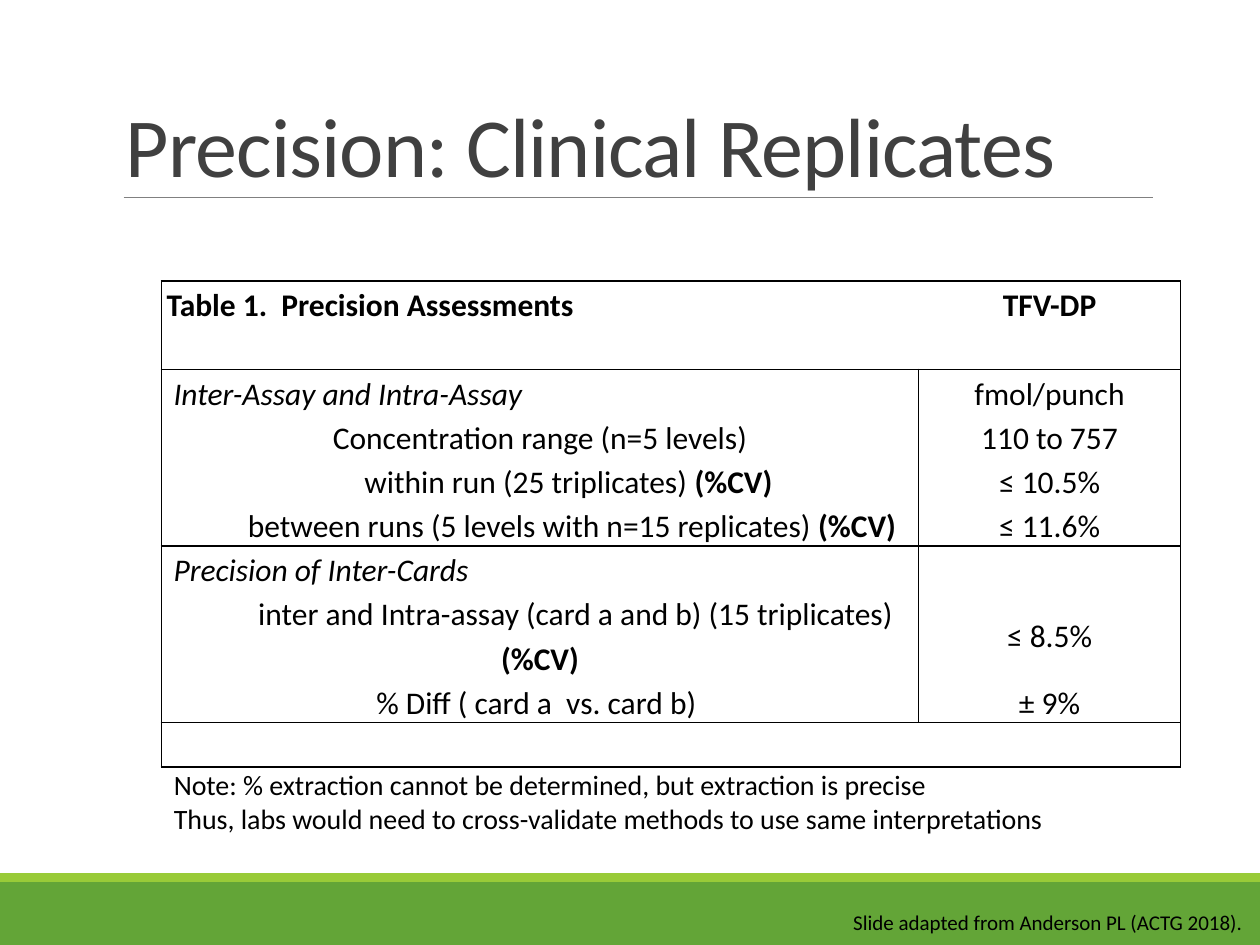
from dataclasses import dataclass

from lxml.etree import SubElement
from pptx import Presentation
from pptx.dml.color import RGBColor
from pptx.enum.shapes import MSO_CONNECTOR, MSO_SHAPE
from pptx.enum.text import MSO_ANCHOR, PP_ALIGN
from pptx.oxml.ns import qn
from pptx.util import Pt


@dataclass(frozen=True)
class Theme:
    font: str = "Calibri"
    ink: str = "000000"
    gray: str = "404040"
    rule: str = "808080"
    green: str = "63A537"
    lime: str = "99CB38"
    title: int = 48
    body: int = 18
    note: int = 16
    credit: int = 12


THEME = Theme()
WIDE, HIGH = 720, 540
LINE = 25.25  # height of one table line
CV = "(%CV)"

# label, bold tail, first-line indent, value
HEAD = [("Table 1.  Precision Assessments", "", 0, "TFV-DP"), ("", "", 0, "")]
ASSAY = [
    ("Inter-Assay and Intra-Assay", "", 0, "fmol/punch"),
    ("Concentration range (n=5 levels)", "", 0, "110 to 757"),
    ("within run (25 triplicates) ", CV, 32.5, "≤ 10.5%"),
    ("between runs (5 levels with n=15 replicates) ", CV, 36.6, "≤ 11.6%"),
]
CARDS = [
    ("Precision of Inter-Cards", "", 0, ""),
    ("inter and Intra-assay (card a and b) (15 triplicates) ", CV, 40.7, "≤ 8.5%"),
    ("% Diff ( card a  vs. card b) ", "", 0, "± 9%"),
]
GROUPS = [HEAD, ASSAY, CARDS, [("", "", 0, "")]]


def color(code):
    return RGBColor.from_string(code)


def style(para, size, ink=THEME.ink, align=PP_ALIGN.LEFT):
    para.alignment = align
    para.font.name = THEME.font
    para.font.size = Pt(size)
    para.font.color.rgb = color(ink)


def add_text(slide, box, lines, size, ink=THEME.ink, align=PP_ALIGN.LEFT, wrap=True):
    frame = slide.shapes.add_textbox(*map(Pt, box)).text_frame
    frame.word_wrap = wrap
    for i, line in enumerate(lines):
        para = frame.add_paragraph() if i else frame.paragraphs[0]
        para.text = line
        style(para, size, ink, align)
    return frame


def add_title(slide, box, text):
    frame = add_text(slide, box, [text], THEME.title, THEME.gray)
    frame.vertical_anchor = MSO_ANCHOR.BOTTOM
    para = frame.paragraphs[0]
    para.line_spacing = 0.85
    para.runs[0].font._element.set("spc", "-50")


def add_rule(slide, left, right, y):
    rule = slide.shapes.add_connector(
        MSO_CONNECTOR.STRAIGHT, Pt(left), Pt(y), Pt(right), Pt(y))
    rule.line.color.rgb = color(THEME.rule)
    rule.line.width = Pt(0.5)
    SubElement(rule._element.spPr, qn("a:effectLst"))


def add_band(slide, box, fill):
    band = slide.shapes.add_shape(MSO_SHAPE.RECTANGLE, *map(Pt, box))
    band.shadow.inherit = False
    band.fill.solid()
    band.fill.fore_color.rgb = color(fill)
    band.line.fill.background()


def add_footer(slide, box, text):
    left, top, width, height = box
    add_band(slide, box, THEME.green)
    add_band(slide, (left, top - 5, width, 5), THEME.lime)
    frame = add_text(slide, (276, top + 10.8, width - 276, 25.2), [text],
                     THEME.credit, align=PP_ALIGN.RIGHT)
    frame.margin_left = frame.margin_right = Pt(10)
    frame.margin_top = frame.margin_bottom = Pt(5)


def edge(cell, sides):
    """Draw the named sides of a cell and clear the others."""
    props = cell._tc.get_or_add_tcPr()
    for i, side in enumerate("LRTB"):
        line = props.makeelement(qn("a:ln" + side), {"w": str(Pt(1))})
        if side in sides:
            fill = SubElement(line, qn("a:solidFill"))
            SubElement(fill, qn("a:srgbClr"), val=THEME.ink)
        else:
            SubElement(line, qn("a:noFill"))
        props.insert(i, line)


def fill_cell(cell, text, tail="", indent=0, align=PP_ALIGN.CENTER):
    cell.fill.background()
    cell.vertical_anchor = MSO_ANCHOR.MIDDLE
    cell.margin_left = cell.margin_right = Pt(3)
    cell.margin_top = cell.margin_bottom = 0
    para = cell.text_frame.paragraphs[0]
    style(para, THEME.body, align=align)
    para.line_spacing = 1.15
    if text:
        para.add_run().text = text
    if tail:
        run = para.add_run()
        run.text = tail
        run.font.bold = True
    if indent:
        props = para._p.get_or_add_pPr()
        props.set("marL", "0")
        props.set("indent", str(Pt(indent)))
    return para


def add_grid(slide, box, groups):
    count = sum(map(len, groups))
    grid = slide.shapes.add_table(count, 2, *map(Pt, box)).table
    grid.first_row = grid.horz_banding = False
    for col, width in zip(grid.columns, (box[2] - 149.8, 149.8)):
        col.width = Pt(width)
    y = 0
    for group in groups:
        split = group in (ASSAY, CARDS)
        for i, (label, tail, indent, value) in enumerate(group):
            grid.rows[y].height = Pt(LINE * (2 if indent > 40 else 1))
            first, last = grid.cell(y, 0), grid.cell(y, 1)
            lead = PP_ALIGN.CENTER if i else PP_ALIGN.LEFT
            left = fill_cell(first, label, tail, indent, lead)
            right = fill_cell(last, value)
            if group is HEAD:
                left.font.bold = right.font.bold = True
            elif split and i == 0:
                left.font.italic = True
                first.margin_left = Pt(7)
            ends = ("T" if i == 0 else "") + ("B" if i == len(group) - 1 else "")
            edge(first, "L" + ends + ("R" if split else ""))
            edge(last, "R" + ends + ("L" if split else ""))
            y += 1


def main():
    deck = Presentation()
    deck.slide_width, deck.slide_height = Pt(WIDE), Pt(HIGH)
    slide = deck.slides.add_slide(deck.slide_layouts[6])
    add_footer(slide, (0, 504, WIDE, 36),
               "Slide adapted from Anderson PL (ACTG 2018).")
    add_rule(slide, 70.6, 658.8, 113)
    add_title(slide, (64.8, 0, 594, 114.5), "Precision: Clinical Replicates")
    add_grid(slide, (92.2, 160.6, 582.5, 278), GROUPS)
    add_text(slide, (92.2, 435, 517.7, 46), [
        "Note: % extraction cannot be determined, but extraction is precise",
        "Thus, labs would need to cross-validate methods to use same interpretations",
    ], THEME.note, wrap=False)
    deck.save("out.pptx")


if __name__ == "__main__":
    main()
